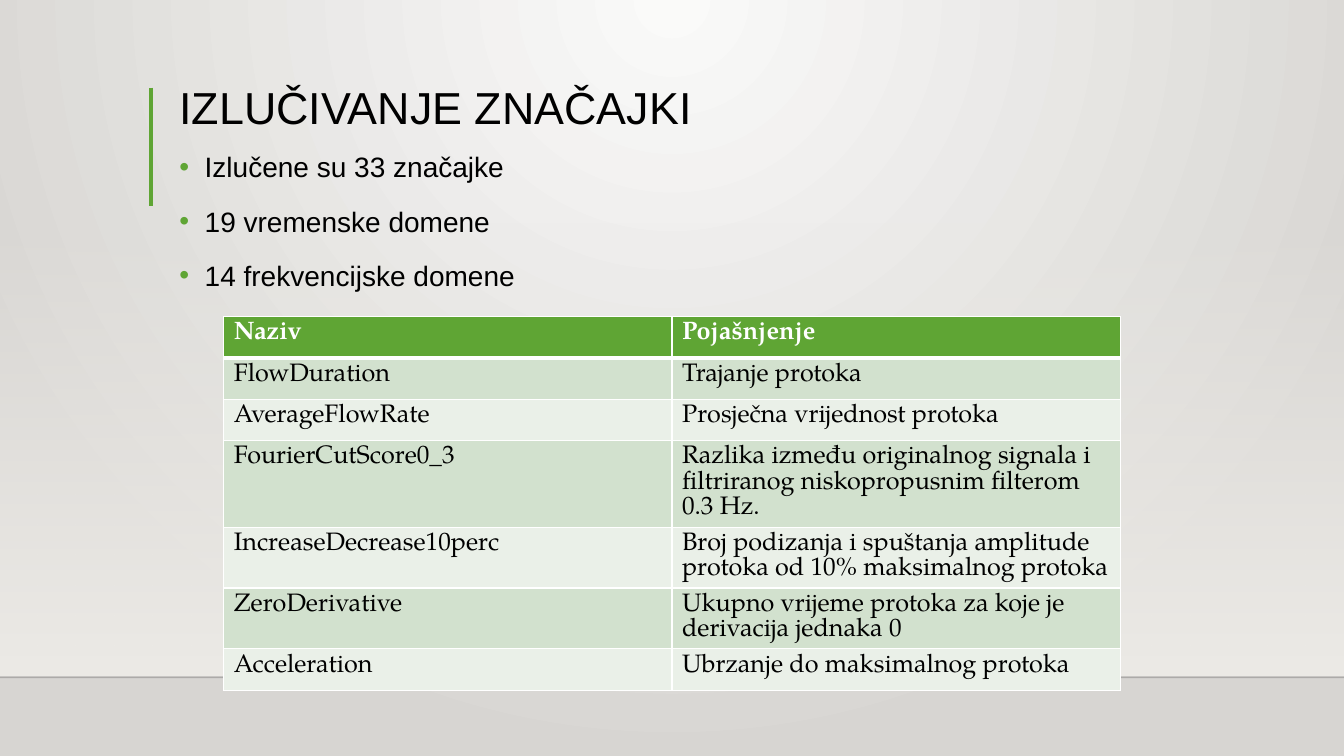
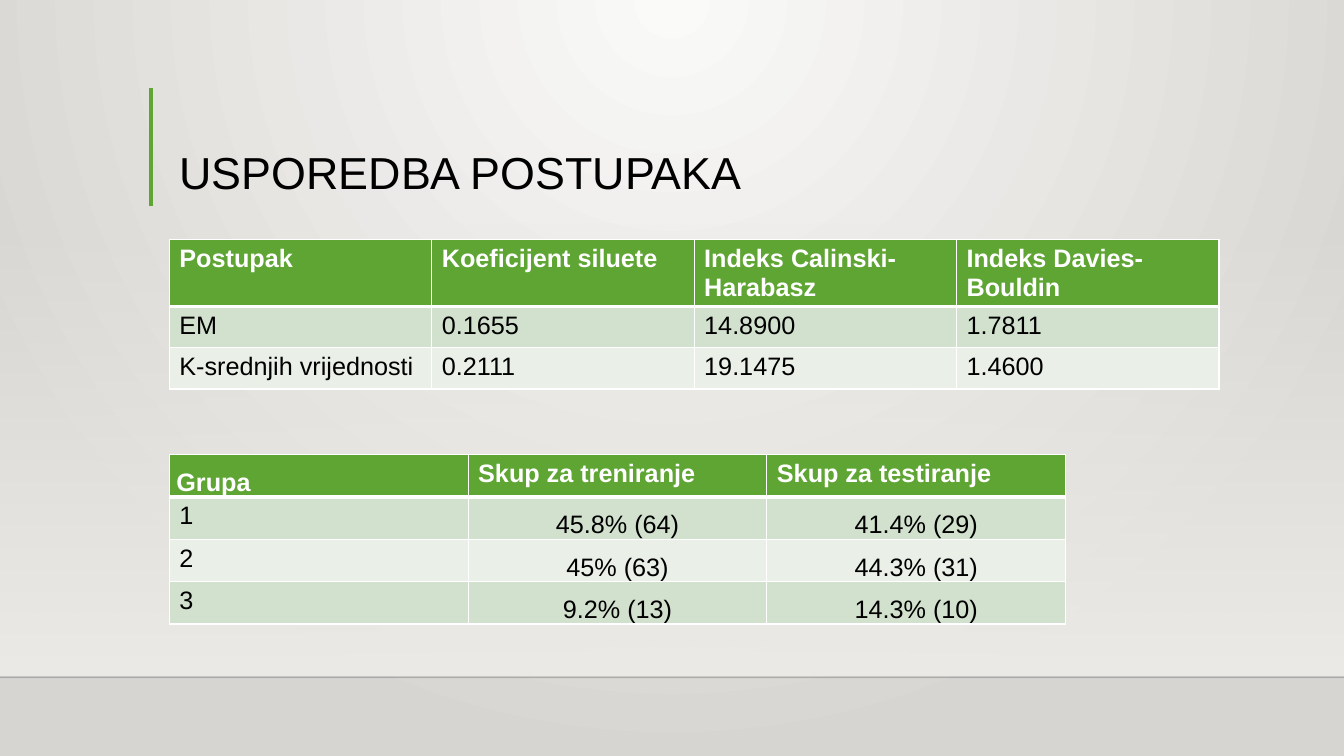
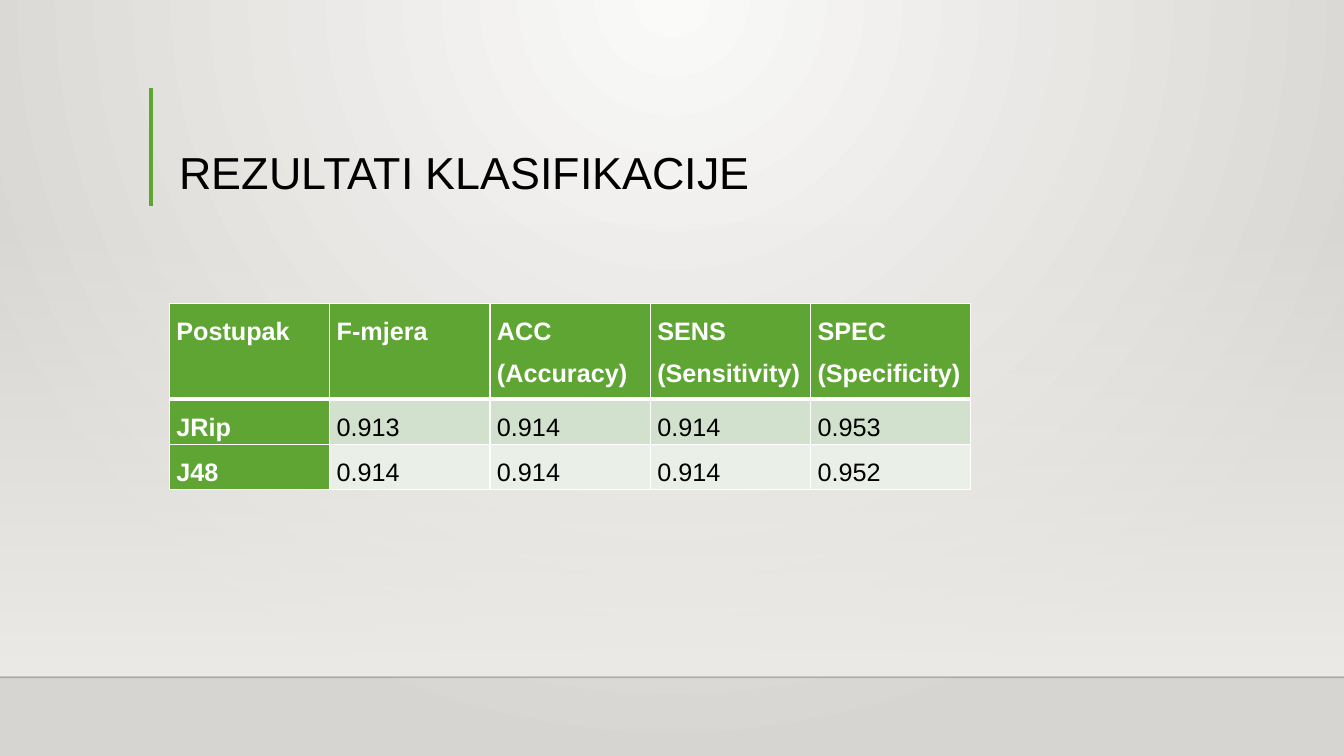
from dataclasses import dataclass

from lxml import etree
from pptx import Presentation
from pptx.dml.color import RGBColor
from pptx.enum.shapes import MSO_CONNECTOR, MSO_SHAPE
from pptx.enum.text import MSO_ANCHOR, MSO_AUTO_SIZE, PP_ALIGN
from pptx.oxml import parse_xml
from pptx.oxml.ns import qn
from pptx.util import Inches, Pt

LEFT, CENTER, JUSTIFY = PP_ALIGN.LEFT, PP_ALIGN.CENTER, PP_ALIGN.JUSTIFY
STRAIGHT = MSO_CONNECTOR.STRAIGHT
RECTANGLE = MSO_SHAPE.RECTANGLE
DRAWING_NAMESPACE = "http://schemas.openxmlformats.org/drawingml/2006/main"


@dataclass(frozen=True)
class Theme:
    accent: str = "5FA534"
    text: str = "000000"
    white: str = "FFFFFF"
    band_dark: str = "D2E1CE"
    band_light: str = "EAF0E8"
    glow: str = "FAFAF9"
    edge: str = "D7D5D2"
    wall: str = "EDEBE7"
    floor_line: str = "000001"
    font: str = "Arial"
    serif: str = "TeX Gyre Pagella"
    title_size: int = 32
    body_size: int = 20
    table_size: int = 18
    thin: int = 1
    thick: int = 3


THEME = Theme()


@dataclass(frozen=True)
class CellLayout:
    align: PP_ALIGN = LEFT
    spacing: float = 1.0
    side_margin: float = 0.1
    end_margin: float = 0.05


PLAIN = CellLayout()
SNUG = CellLayout(JUSTIFY, 1.5, 0.07, 0)
SNUG_CENTER = CellLayout(CENTER, 1.5, 0.07, 0)


@dataclass(frozen=True)
class TableData:
    left: float
    top: float
    width: float
    row_heights: tuple[float, ...]
    rows: tuple[tuple[str, ...], ...]
    header_layouts: tuple[CellLayout, ...]
    body_layouts: tuple[CellLayout, ...]
    font: str = THEME.font
    accent_first_column: bool = False


@dataclass(frozen=True)
class SlideData:
    title: str
    tables: tuple[TableData, ...]
    bullets: tuple[str, ...] = ()
    title_top: float = 0.88


SLIDES = (
    SlideData(
        "IZLUČIVANJE ZNAČAJKI",
        (
            TableData(
                2.22, 3.14, 8.89, (0.41, 0.41, 0.41, 0.86, 0.6, 0.6, 0.41),
                (
                    ("Naziv", "Pojašnjenje"),
                    ("FlowDuration", "Trajanje protoka"),
                    ("AverageFlowRate", "Prosječna vrijednost protoka"),
                    ("FourierCutScore0_3",
                     "Razlika između originalnog signala i filtriranog "
                     "niskopropusnim filterom 0.3 Hz."),
                    ("IncreaseDecrease10perc",
                     "Broj podizanja i spuštanja amplitude protoka od 10% "
                     "maksimalnog protoka"),
                    ("ZeroDerivative",
                     "Ukupno vrijeme protoka za koje je derivacija jednaka 0"),
                    ("Acceleration", "Ubrzanje do maksimalnog protoka"),
                ),
                (PLAIN,) * 2, (PLAIN,) * 2, font=THEME.serif,
            ),
        ),
        ("Izlučene su 33 značajke", "19 vremenske domene", "14 frekvencijske domene"),
        title_top=0.23,
    ),
    SlideData(
        "USPOREDBA POSTUPAKA",
        (
            TableData(
                1.68, 2.38, 10.41, (0.65, 0.41, 0.41),
                (
                    ("Postupak", "Koeficijent siluete",
                     "Indeks Calinski-Harabasz", "Indeks Davies-Bouldin"),
                    ("EM", "0.1655", "14.8900", "1.7811"),
                    ("K-srednjih vrijednosti", "0.2111", "19.1475", "1.4600"),
                ),
                (PLAIN,) * 4, (PLAIN,) * 4,
            ),
            TableData(
                1.68, 4.51, 8.89, (0.41,) * 4,
                (
                    ("Grupa", "Skup za treniranje", "Skup za testiranje"),
                    ("1", "45.8% (64)", "41.4% (29)"),
                    ("2", "45% (63)", "44.3% (31)"),
                    ("3", "9.2% (13)", "14.3% (10)"),
                ),
                (SNUG, PLAIN, PLAIN), (PLAIN, SNUG_CENTER, SNUG_CENTER),
            ),
        ),
    ),
    SlideData(
        "REZULTATI KLASIFIKACIJE",
        (
            TableData(
                1.68, 3.01, 7.95, (0.95, 0.45, 0.45),
                (
                    ("Postupak", "F-mjera", "ACC (Accuracy)",
                     "SENS (Sensitivity)", "SPEC (Specificity)"),
                    ("JRip", "0.913", "0.914", "0.914", "0.953"),
                    ("J48", "0.914", "0.914", "0.914", "0.952"),
                ),
                (SNUG,) * 5, (SNUG,) * 5, accent_first_column=True,
            ),
        ),
    ),
)


# Formatting helpers
def rgb(color: str) -> RGBColor:
    return RGBColor.from_string(color)


def format_paragraph(paragraph, font: str, size: int, color: str, spacing: float,
                     align: PP_ALIGN = LEFT, bold: bool = False) -> None:
    paragraph.alignment = align
    paragraph.line_spacing = spacing
    for run in paragraph.runs:
        run.font.name = font
        run.font.size = Pt(size)
        run.font.bold = bold
        run.font.color.rgb = rgb(color)


def gradient(start: str, end: str, direction: str, start_alpha: int = 100):
    return parse_xml(
        f'<a:gradFill xmlns:a="{DRAWING_NAMESPACE}" rotWithShape="1"><a:gsLst>'
        f'<a:gs pos="0"><a:srgbClr val="{start}">'
        f'<a:alpha val="{start_alpha * 1000}"/></a:srgbClr></a:gs>'
        f'<a:gs pos="100000"><a:srgbClr val="{end}"/></a:gs>'
        f'</a:gsLst>{direction}</a:gradFill>'
    )


def replace_solid_fill(properties, fill) -> None:
    properties.replace(properties.find(qn("a:solidFill")), fill)


# Shared background, wall and rules
def add_rule(slide, start: tuple[float, float], end: tuple[float, float],
             color: str, width: int, alpha: int = 100):
    points = [Inches(value) for value in (*start, *end)]
    rule = slide.shapes.add_connector(STRAIGHT, *points)
    rule.line.color.rgb = rgb(color)
    rule.line.width = Pt(width)
    properties = rule.element.spPr
    color_element = properties.find(f".//{qn('a:srgbClr')}")
    etree.SubElement(color_element, qn("a:alpha"), val=str(alpha * 1000))
    etree.SubElement(properties, qn("a:effectLst"))
    return rule


def decorate_master(presentation, slide) -> None:
    master = presentation.slide_master
    master.background.fill.solid()
    background = master.element.xpath(".//p:bgPr")[0]
    replace_solid_fill(background, gradient(
        THEME.glow, THEME.edge,
        '<a:path path="circle"><a:fillToRect l="43000" t="0" r="43000" b="100000"/></a:path>',
    ))

    wall = slide.shapes.add_shape(
        RECTANGLE, 0, Inches(2.2), presentation.slide_width, Inches(4.5))
    wall.shadow.inherit = False
    wall.line.fill.background()
    wall.fill.solid()
    replace_solid_fill(wall.element.spPr, gradient(
        THEME.wall, THEME.wall, '<a:lin ang="5400000" scaled="0"/>', start_alpha=0))

    floor = add_rule(slide, (0, 6.72), (13.33, 6.72), THEME.floor_line, THEME.thin, 20)
    title_bar = add_rule(slide, (1.5, 0.87), (1.5, 2.04), THEME.accent, THEME.thick)
    # Move the shared shapes behind the master's placeholders
    for position, shape in enumerate((wall, floor, title_bar), start=2):
        master.shapes.element.insert(position, shape.element)


# Title and list placeholders
def place(shape, left: float, top: float, width: float, height: float) -> None:
    shape.left, shape.top = Inches(left), Inches(top)
    shape.width, shape.height = Inches(width), Inches(height)
    shape.text_frame.auto_size = MSO_AUTO_SIZE.NONE


def fill_title(title, text: str, top: float) -> None:
    place(title, 1.68, top, 10.41, 1.15)
    title.text_frame.text = text
    title.text_frame.vertical_anchor = MSO_ANCHOR.BOTTOM
    format_paragraph(title.text_frame.paragraphs[0], THEME.font,
                     THEME.title_size, THEME.text, 0.9)


def fill_bullets(body, bullets: tuple[str, ...]) -> None:
    place(body, 1.68, 1.37, 10.41, 3.77)
    body.text_frame.text = "\n".join(bullets)
    for index, paragraph in enumerate(body.text_frame.paragraphs):
        properties = paragraph._p.get_or_add_pPr()
        properties.set("marL", str(Inches(0.25)))
        properties.set("indent", str(-Inches(0.25)))
        bullet_color = etree.SubElement(properties, qn("a:buClr"))
        etree.SubElement(bullet_color, qn("a:srgbClr"), val=THEME.accent)
        etree.SubElement(properties, qn("a:buFont"), typeface=THEME.font)
        etree.SubElement(properties, qn("a:buChar"), char="•")
        paragraph.space_before = Pt(10 if index else 0)
        format_paragraph(paragraph, THEME.font, THEME.body_size, THEME.text, 1.2)


# Tables
def set_borders(cell, top: int, bottom: int) -> None:
    properties = cell._tc.get_or_add_tcPr()
    widths = {"lnL": THEME.thin, "lnR": THEME.thin, "lnT": top, "lnB": bottom}
    for side, width in widths.items():
        line = etree.SubElement(properties, qn(f"a:{side}"), w=str(Pt(width)))
        fill = etree.SubElement(line, qn("a:solidFill"))
        etree.SubElement(fill, qn("a:srgbClr"), val=THEME.white)


def fill_cell(cell, text: str, layout: CellLayout, font: str,
              accented: bool, background: str) -> None:
    cell.margin_left = cell.margin_right = Inches(layout.side_margin)
    cell.margin_top = cell.margin_bottom = Inches(layout.end_margin)
    cell.fill.solid()
    cell.fill.fore_color.rgb = rgb(THEME.accent if accented else background)
    cell.text_frame.text = text
    format_paragraph(cell.text_frame.paragraphs[0], font, THEME.table_size,
                     THEME.white if accented else THEME.text,
                     layout.spacing, layout.align, accented)


def add_data_table(slide, data: TableData) -> None:
    column_count = len(data.rows[0])
    table = slide.shapes.add_table(
        len(data.rows), column_count, Inches(data.left), Inches(data.top),
        Inches(data.width), Inches(sum(data.row_heights))).table
    table.horz_banding = False
    for column in table.columns:
        column.width = Inches(data.width / column_count)
    for row_index, texts in enumerate(data.rows):
        table.rows[row_index].height = Inches(data.row_heights[row_index])
        is_header = row_index == 0
        layouts = data.header_layouts if is_header else data.body_layouts
        background = THEME.band_dark if row_index % 2 else THEME.band_light
        for column_index, (text, layout) in enumerate(zip(texts, layouts)):
            cell = table.cell(row_index, column_index)
            set_borders(cell,
                        top=THEME.thick if row_index == 1 else THEME.thin,
                        bottom=THEME.thick if is_header else THEME.thin)
            accented = is_header or (data.accent_first_column and column_index == 0)
            fill_cell(cell, text, layout, data.font, accented, background)


def main() -> None:
    presentation = Presentation()
    presentation.slide_width = Inches(13.33)
    presentation.slide_height = Inches(7.5)
    list_layout = presentation.slide_layouts.get_by_name("Title and Content")
    title_layout = presentation.slide_layouts.get_by_name("Title Only")

    for data in SLIDES:
        slide = presentation.slides.add_slide(
            list_layout if data.bullets else title_layout)
        fill_title(slide.shapes.title, data.title, data.title_top)
        if data.bullets:
            fill_bullets(slide.placeholders[1], data.bullets)
        for table in data.tables:
            add_data_table(slide, table)

    decorate_master(presentation, presentation.slides[0])
    presentation.save("out.pptx")


if __name__ == "__main__":
    main()
